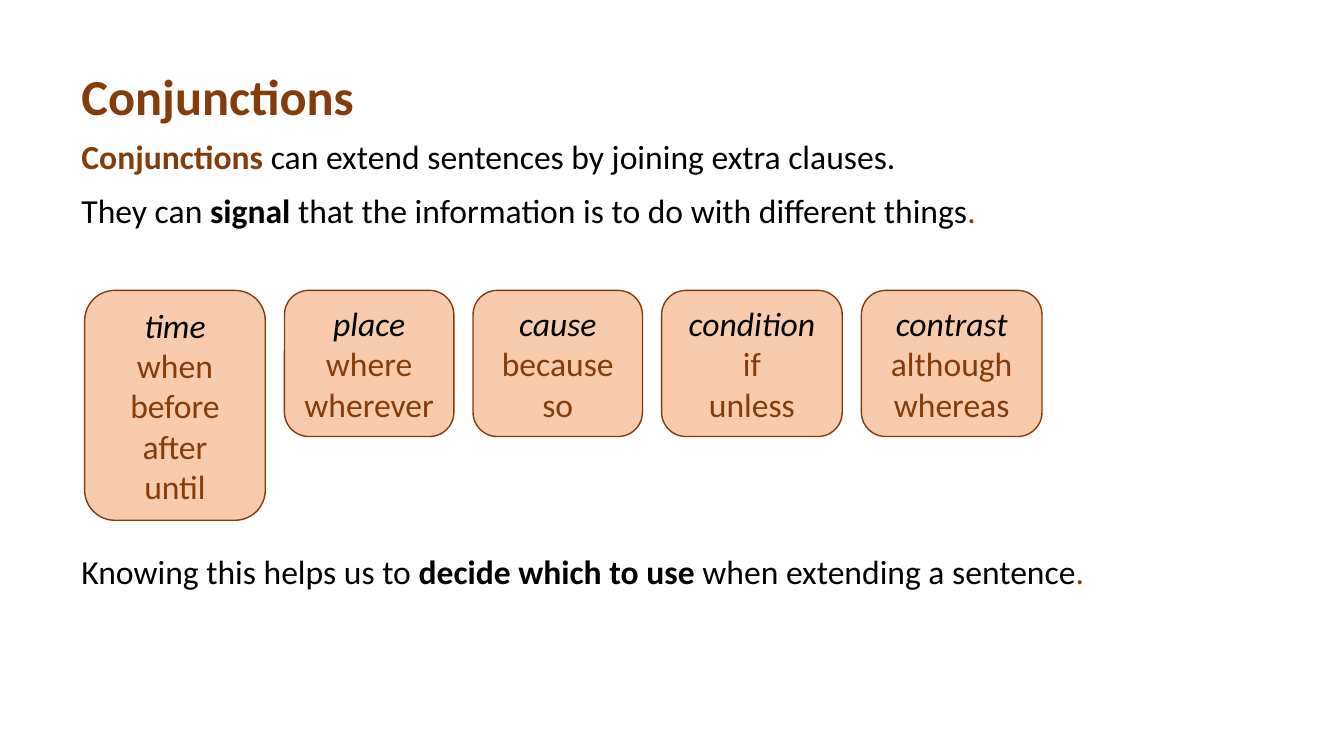
import pptx
import pptx.util
import pptx.dml.color
import pptx.enum.shapes
import pptx.enum.text

Pt = pptx.util.Pt

# Content
BROWN, PEACH, BLACK = "843C0B", "F8CBAD", "000000"

# Each line: top, width, height, size, runs of (text, colour, bold)
LINES = [
    (43.2, 832.3, 51, 36, [("Conjunctions", BROWN, True)]),
    (93.6, 660.2, 36, 24, [
        ("Conjunctions", BROWN, True),
        (" can extend sentences by joining extra clauses.", BLACK, False)]),
    (131.8, 715, 36, 24, [
        ("They can ", BLACK, False),
        ("signal", BLACK, True),
        (" that the information is to do with different things", BLACK, False),
        (".", BROWN, False)]),
    (390.2, 809.3, 36, 24, [
        ("Knowing this helps us to ", BLACK, False),
        ("decide which to use ", BLACK, True),
        ("when extending a sentence", BLACK, False),
        (".", BROWN, False)]),
]

# Each card: width, heading, words
CARDS = [
    (129, "time", ["when", "before", "after", "until"]),
    (121, "place", ["where", "wherever"]),
    (121, "cause", ["because", "so"]),
    (129, "condition", ["if", "unless"]),
    (129, "contrast", ["although", "whereas"]),
]

# Layout
LEFT = 51.1
CARD_LEFT, CARD_TOP, GAP = 60.5, 207.4, 13.7
ROW, PAD = 29.9, 14.7


def tint(code):
    return pptx.dml.color.RGBColor.from_string(code)


def style(run, size, color, bold=False, italic=False):
    font = run.font
    font.name, font.size = "Calibri", Pt(size)
    font.bold, font.italic = bold, italic
    font.color.rgb = tint(color)


def add_line(slide, top, width, height, size, runs):
    box = slide.shapes.add_textbox(Pt(LEFT), Pt(top), Pt(width), Pt(height))
    box.text_frame.word_wrap = True
    para = box.text_frame.paragraphs[0]
    for text, color, bold in runs:
        run = para.add_run()
        run.text = text
        style(run, size, color, bold)


def add_card(slide, left, width, head, words):
    height = PAD + ROW * (1 + len(words))
    card = slide.shapes.add_shape(
        pptx.enum.shapes.MSO_SHAPE.ROUNDED_RECTANGLE,
        Pt(left), Pt(CARD_TOP), Pt(width), Pt(height))
    card.shadow.inherit = False
    card.fill.solid()
    card.fill.fore_color.rgb = tint(PEACH)
    card.line.color.rgb = tint(BROWN)
    card.line.width = Pt(1)
    frame = card.text_frame
    frame.word_wrap = True
    frame.vertical_anchor = pptx.enum.text.MSO_ANCHOR.MIDDLE
    frame.text = "\n".join([head] + words)
    for row, para in enumerate(frame.paragraphs):
        para.alignment = pptx.enum.text.PP_ALIGN.CENTER
        first = row == 0
        style(para.runs[0], 24, BLACK if first else BROWN, italic=first)


def main():
    deck = pptx.Presentation()
    deck.slide_width, deck.slide_height = Pt(960), Pt(540)
    slide = deck.slides.add_slide(deck.slide_layouts[6])

    # Title and sentences
    for line in LINES:
        add_line(slide, *line)

    # Row of cards
    left = CARD_LEFT
    for width, head, words in CARDS:
        add_card(slide, left, width, head, words)
        left += width + GAP

    deck.save("out.pptx")


if __name__ == "__main__":
    main()
